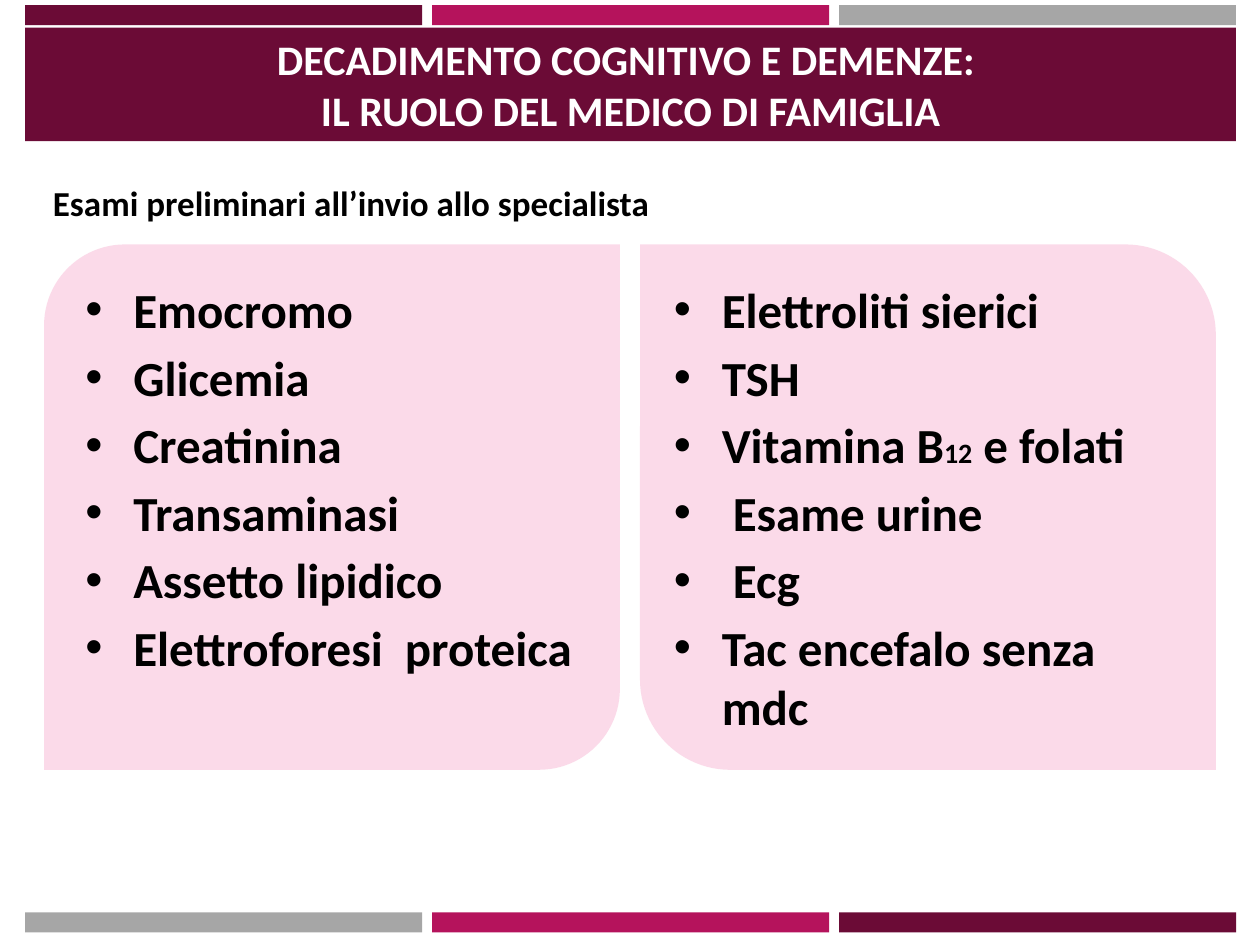
"""Build the slide on preliminary exams for cognitive decline."""
import pptx
import pptx.dml.color
import pptx.enum.shapes
import pptx.enum.text
import pptx.oxml.ns
import pptx.util
from lxml import etree

Inches = pptx.util.Inches
Pt = pptx.util.Pt
SHAPES = pptx.enum.shapes.MSO_SHAPE
COLOURS = {
    "wine": "6B0B36", "magenta": "B5135C", "grey": "A6A6A6",
    "pink": "F59DC5", "black": "000000", "white": "FFFFFF",
}

presentation = pptx.Presentation()
presentation.slide_width = Inches(10)
presentation.slide_height = Inches(7.5)
slide = presentation.slides.add_slide(presentation.slide_layouts[6])


def add_block(kind, left, top, width, height, colour):
    shape = slide.shapes.add_shape(kind, Inches(left), Inches(top), Inches(width), Inches(height))
    shape.shadow.inherit = False
    shape.fill.solid()
    shape.fill.fore_color.rgb = pptx.dml.color.RGBColor.from_string(COLOURS[colour])
    shape.line.fill.background()
    return shape


def add_run(paragraph, text, size, colour):
    run = paragraph.add_run()
    run.text = text
    for name, value in {"name": "Calibri", "size": Pt(size), "bold": True}.items():
        setattr(run.font, name, value)
    run.font.color.rgb = pptx.dml.color.RGBColor.from_string(COLOURS[colour])


for left, adjustments in [(5.08, (0, 0.172)), (0.35, (0.154, 0))]:
    panel = add_block(SHAPES.ROUND_2_DIAG_RECTANGLE, left, 1.94, 4.57, 4.17, "pink")
    for index, value in enumerate(adjustments):
        panel.adjustments[index] = value
    colour_element = panel.fill._xPr.find(".//" + pptx.oxml.ns.qn("a:srgbClr"))
    etree.SubElement(colour_element, pptx.oxml.ns.qn("a:alpha"), val="37000")

bar_rows = [
    (0.04, 0, ["wine", "magenta", "grey"]),
    (7.24, 180, ["grey", "magenta", "wine"]),
]
for top, rotation, colours in bar_rows:
    for column, colour in enumerate(colours):
        bar = add_block(SHAPES.RECTANGLE, 0.2 + column * 3.23, top, 3.15, 0.16, colour)
        bar.rotation = rotation

banner = add_block(SHAPES.RECTANGLE, 0.2, 0.22, 9.61, 0.9, "wine")
title_lines = ["DECADIMENTO COGNITIVO E DEMENZE: ", "IL RUOLO DEL MEDICO DI FAMIGLIA"]
for index, line in enumerate(title_lines):
    frame = banner.text_frame
    paragraph = frame.add_paragraph() if index else frame.paragraphs[0]
    paragraph.alignment = pptx.enum.text.PP_ALIGN.CENTER
    add_run(paragraph, line, 24, "white")

exam_lists = [
    (0.58, 4.58, [
        "Emocromo", "Glicemia", "Creatinina", "Transaminasi",
        "Assetto lipidico", "Elettroforesi  proteica",
    ]),
    (5.25, 4.25, [
        "Elettroliti sierici", "TSH", ("Vitamina B", "12", " e folati"),
        " Esame urine", " Ecg", "Tac encefalo senza mdc",
    ]),
]
for left, width, exams in exam_lists:
    frame = slide.shapes.add_textbox(Inches(left), Inches(2.17), Inches(width), Inches(5)).text_frame
    frame.word_wrap = True
    for index, exam in enumerate(exams):
        paragraph = frame.add_paragraph() if index else frame.paragraphs[0]
        properties = paragraph._p.get_or_add_pPr()
        properties.set("marL", str(Inches(0.38)))
        properties.set("indent", str(-Inches(0.38)))
        paragraph.space_before = Pt(5)
        etree.SubElement(properties, pptx.oxml.ns.qn("a:buFont"), typeface="Arial")
        etree.SubElement(properties, pptx.oxml.ns.qn("a:buChar"), char="•")
        for text in (exam,) if isinstance(exam, str) else exam:
            add_run(paragraph, text, 16 if text == "12" else 28, "black")

heading = slide.shapes.add_textbox(Inches(0.2), Inches(1.39), Inches(5.12), Inches(0.43)).text_frame
heading.word_wrap = True
heading.margin_left = Inches(0.22)
add_run(heading.paragraphs[0], "Esami preliminari all’invio allo specialista", 20, "black")

presentation.save("out.pptx")
